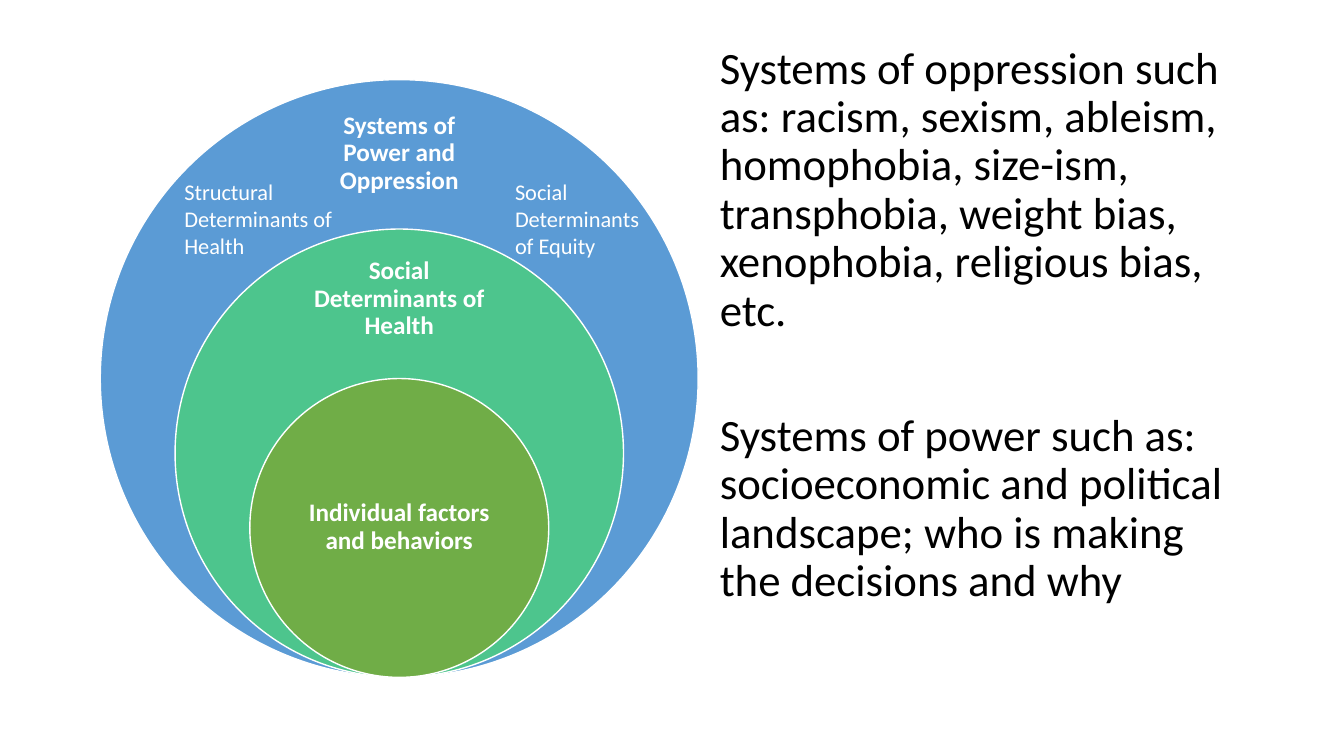
from pptx import Presentation
from pptx.dml.color import RGBColor
from pptx.enum.shapes import MSO_SHAPE as SHAPE
from pptx.enum.text import MSO_ANCHOR as ANCHOR, PP_ALIGN as ALIGN
from pptx.util import Inches, Pt

# Content
FONT, WHITE, BLACK = "Calibri", "FFFFFF", "000000"
CENTER_X, BASE_Y, OUTER = 3.96, 6.72, 5.93
# share of outer diameter, fill, label, label (top, width, height)
CIRCLES = [
    (1, "5B9BD5", "Systems of Power and Oppression", (1.08, 2.07, 0.89)),
    (0.75, "4DC58D", "Social Determinants of Health", (2.55, 2.07, 0.83)),
    (0.5, "70AD47", "Individual factors and behaviors", (4.49, 2.1, 1.48)),
]
# left, right inset, text
SIDE_LABELS = [
    (1.73, 0.1, "Structural Determinants of Health"),
    (5.01, 0.6, "Social Determinants of Equity"),
]
# space before, text
EXAMPLES = [
    (10, "Systems of oppression such as: racism, sexism, ableism, homophobia, "
         "size-ism, transphobia, weight bias, xenophobia, religious bias, etc."),
    (55, "Systems of power such as: socioeconomic and political landscape; "
         "who is making the decisions and why"),
]


def rgb(value):
    return RGBColor.from_string(value)


def style(p, text, size, color, bold=False):
    p.text = text
    p.font.name, p.font.size, p.font.bold = FONT, Pt(size), bold
    p.font.color.rgb = rgb(color)


def text_frame(s, left, top, width, height):
    box = s.shapes.add_textbox(*map(Inches, (left, top, width, height)))
    box.text_frame.word_wrap = True
    return box.text_frame


prs = Presentation()
prs.slide_width, prs.slide_height = Inches(13.33), Inches(7.5)
s = prs.slides.add_slide(prs.slide_layouts[6])

# Nested circles resting on one base point, with centred labels
for share, fill, label, (top, width, height) in CIRCLES:
    d = OUTER * share
    sp = s.shapes.add_shape(SHAPE.OVAL, Inches(CENTER_X - d / 2),
                            Inches(BASE_Y - d), Inches(d), Inches(d))
    sp.shadow.inherit = False
    sp.fill.solid()
    sp.fill.fore_color.rgb = rgb(fill)
    sp.line.color.rgb = rgb(WHITE)
    sp.line.width = Pt(1)

    tf = text_frame(s, CENTER_X - width / 2, top, width, height)
    tf.vertical_anchor = ANCHOR.MIDDLE
    tf.margin_left = tf.margin_right = Inches(0.14)
    tf.margin_top = tf.margin_bottom = Inches(0.14)
    p = tf.paragraphs[0]
    style(p, label, 18, WHITE, True)
    p.alignment, p.line_spacing = ALIGN.CENTER, 0.9

# Examples on the right
tf = text_frame(s, 7.04, 0.4, 5.38, 6.68)
for i, (before, text) in enumerate(EXAMPLES):
    p = tf.add_paragraph() if i else tf.paragraphs[0]
    style(p, text, 32, BLACK)
    p.line_spacing, p.space_before = 0.9, Pt(before)

# Side labels in the outer ring
for left, inset, text in SIDE_LABELS:
    tf = text_frame(s, left, 1.72, 2.04, 0.91)
    tf.margin_right = Inches(inset)
    style(tf.paragraphs[0], text, 16, WHITE)

prs.save("out.pptx")
